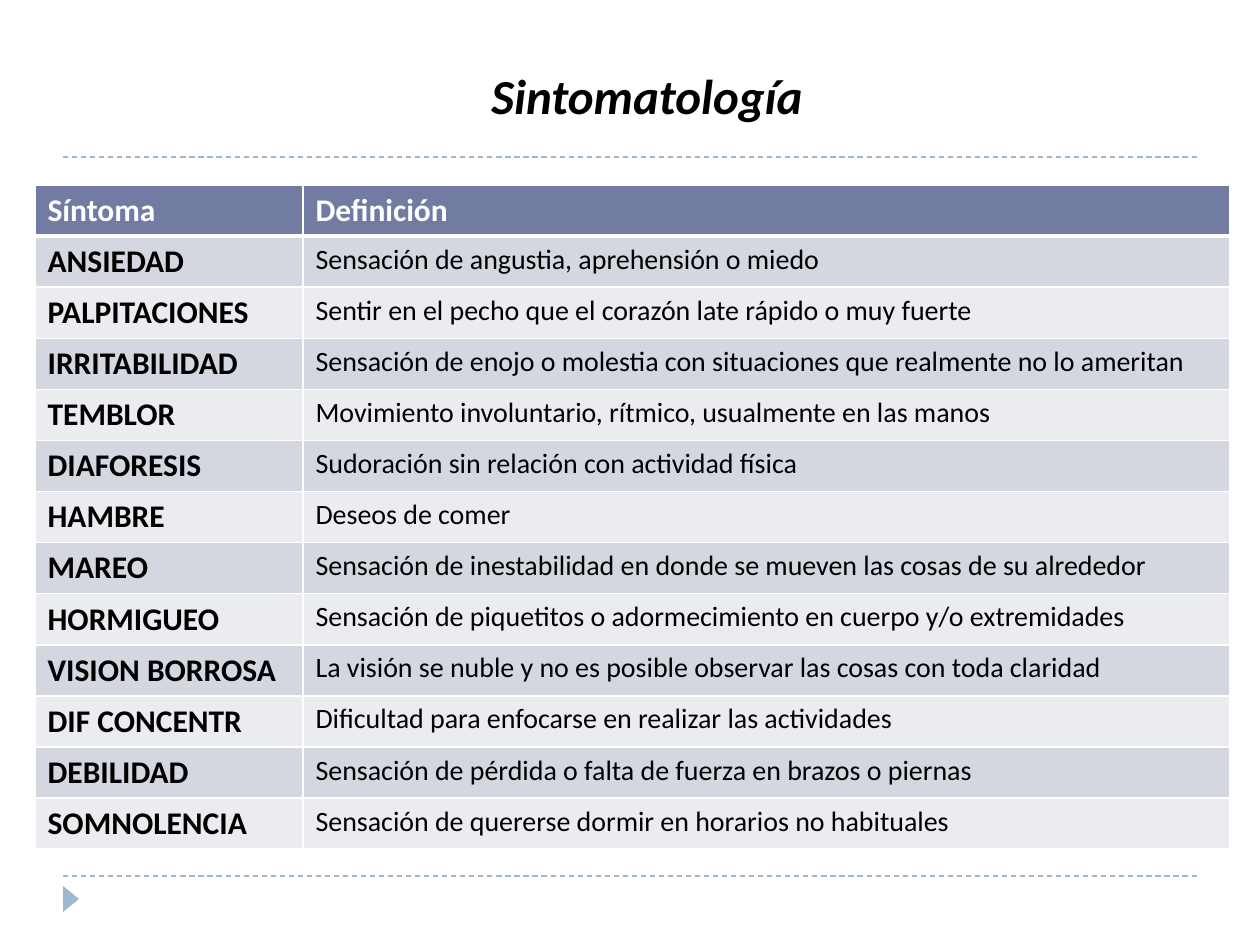
from lxml.etree import SubElement
from pptx import Presentation
from pptx.dml.color import RGBColor
from pptx.enum.dml import MSO_LINE
from pptx.enum.shapes import MSO_CONNECTOR, MSO_SHAPE
from pptx.enum.text import MSO_ANCHOR, MSO_AUTO_SIZE, PP_ALIGN
from pptx.oxml.ns import qn
from pptx.util import Emu, Pt

COLORS = {
    "text": "000000",
    "white": "FFFFFF",
    "accent": "9FB8CD",
    "header": "727CA3",
    "band_dark": "D5D7E0",
    "band_light": "EBECF0",
}
FONT = "Calibri"
SYMPTOMS = [
    ("ANSIEDAD", "Sensación de angustia, aprehensión o miedo"),
    ("PALPITACIONES", "Sentir en el pecho que el corazón late rápido o muy fuerte"),
    ("IRRITABILIDAD", "Sensación de enojo o molestia con situaciones que realmente no lo ameritan"),
    ("TEMBLOR", "Movimiento involuntario, rítmico, usualmente en las manos"),
    ("DIAFORESIS", "Sudoración sin relación con actividad física"),
    ("HAMBRE", "Deseos de comer"),
    ("MAREO", "Sensación de inestabilidad en donde se mueven las cosas de su alrededor"),
    ("HORMIGUEO", "Sensación de piquetitos o adormecimiento en cuerpo y/o extremidades"),
    ("VISION BORROSA", "La visión se nuble y no es posible observar las cosas con toda claridad"),
    ("DIF CONCENTR", "Dificultad para enfocarse en realizar las actividades"),
    ("DEBILIDAD", "Sensación de pérdida o falta de fuerza en brazos o piernas"),
    ("SOMNOLENCIA", "Sensación de quererse dormir en horarios no habituales"),
]


def px(n):
    """Turn px, at 126 to the inch, into EMU."""
    return Emu(round(n * 914400 / 126))


def rgb(name):
    """Look up a named colour."""
    return RGBColor.from_string(COLORS[name])


def write(tf, text, size=18, color="text", bold=False, italic=False, align=None):
    """Put one formatted run of text into a text frame."""
    p = tf.paragraphs[0]
    p.alignment = align
    r = p.add_run()
    r.text = text
    r.font.name = FONT
    r.font.size = Pt(size)
    r.font.bold = bold
    r.font.italic = italic
    r.font.color.rgb = rgb(color)


def add_title(s, box, text):
    """Move the title placeholder into the box and fill it."""
    sp = s.shapes.title
    sp.left, sp.top, sp.width, sp.height = map(px, box)
    tf = sp.text_frame
    tf.word_wrap = True
    tf.auto_size = MSO_AUTO_SIZE.NONE
    tf.vertical_anchor = MSO_ANCHOR.MIDDLE
    write(tf, text, size=28, bold=True, italic=True, align=PP_ALIGN.CENTER)


def add_rule(s, x, y, w):
    """Draw a dashed horizontal rule."""
    line = s.shapes.add_connector(MSO_CONNECTOR.STRAIGHT, px(x), px(y), px(x + w), px(y))
    line.line.color.rgb = rgb("accent")
    line.line.width = Pt(0.75)
    line.line.dash_style = MSO_LINE.DASH
    SubElement(line._element.spPr, qn("a:effectLst"))


def add_marker(s, box):
    """Draw a triangle that points right and fills the box."""
    x, y, w, h = box
    shift = (w - h) / 2
    sp = s.shapes.add_shape(
        MSO_SHAPE.ISOSCELES_TRIANGLE, px(x + shift), px(y - shift), px(h), px(w))
    sp.rotation = 90
    sp.shadow.inherit = False
    sp.fill.solid()
    sp.fill.fore_color.rgb = rgb("accent")
    sp.line.fill.background()


def set_borders(cell, bottom, top):
    """Give a cell white borders, with their widths in points."""
    tcPr = cell._tc.get_or_add_tcPr()
    for side, width in (("L", 1), ("R", 1), ("T", top), ("B", bottom)):
        ln = SubElement(tcPr, qn(f"a:ln{side}"), w=str(Pt(width)))
        fill = SubElement(ln, qn("a:solidFill"))
        SubElement(fill, qn("a:srgbClr"), val=COLORS["white"])


def style_cell(cell, text, fill, bottom=1, top=1, **fmt):
    """Write, border and fill one table cell."""
    write(cell.text_frame, text, **fmt)
    set_borders(cell, bottom, top)
    cell.fill.solid()
    cell.fill.fore_color.rgb = rgb(fill)


def add_symptom_table(s, box, first_col):
    """Build the table of symptoms and definitions in the box."""
    x, y, w, h = box
    n = len(SYMPTOMS) + 1
    table = s.shapes.add_table(n, 2, px(x), px(y), px(w), px(h)).table
    for col, width in zip(table.columns, (first_col, w - first_col)):
        col.width = px(width)
    for row in table.rows:
        row.height = px(h / n)
    for c, text in enumerate(("Síntoma", "Definición")):
        style_cell(table.cell(0, c), text, "header", bottom=3, color="white", bold=True)
    for i, (symptom, definition) in enumerate(SYMPTOMS, 1):
        fill = "band_dark" if i % 2 else "band_light"
        top = 3 if i == 1 else 1
        style_cell(table.cell(i, 0), symptom, fill, top=top, bold=True)
        style_cell(table.cell(i, 1), definition, fill, top=top, size=16)


def main():
    """Build the slide and save it."""
    prs = Presentation()
    prs.slide_width, prs.slide_height = px(1260), px(945)
    s = prs.slides.add_slide(prs.slide_layouts[5])
    for y in (876, 157):
        add_rule(s, 63, y, 1134)
    add_marker(s, (63, 886, 16, 26))
    add_title(s, (98, 59, 1098, 72), "Sintomatología")
    add_symptom_table(s, (35, 185, 1195, 658), 268)
    prs.save("out.pptx")


if __name__ == "__main__":
    main()
